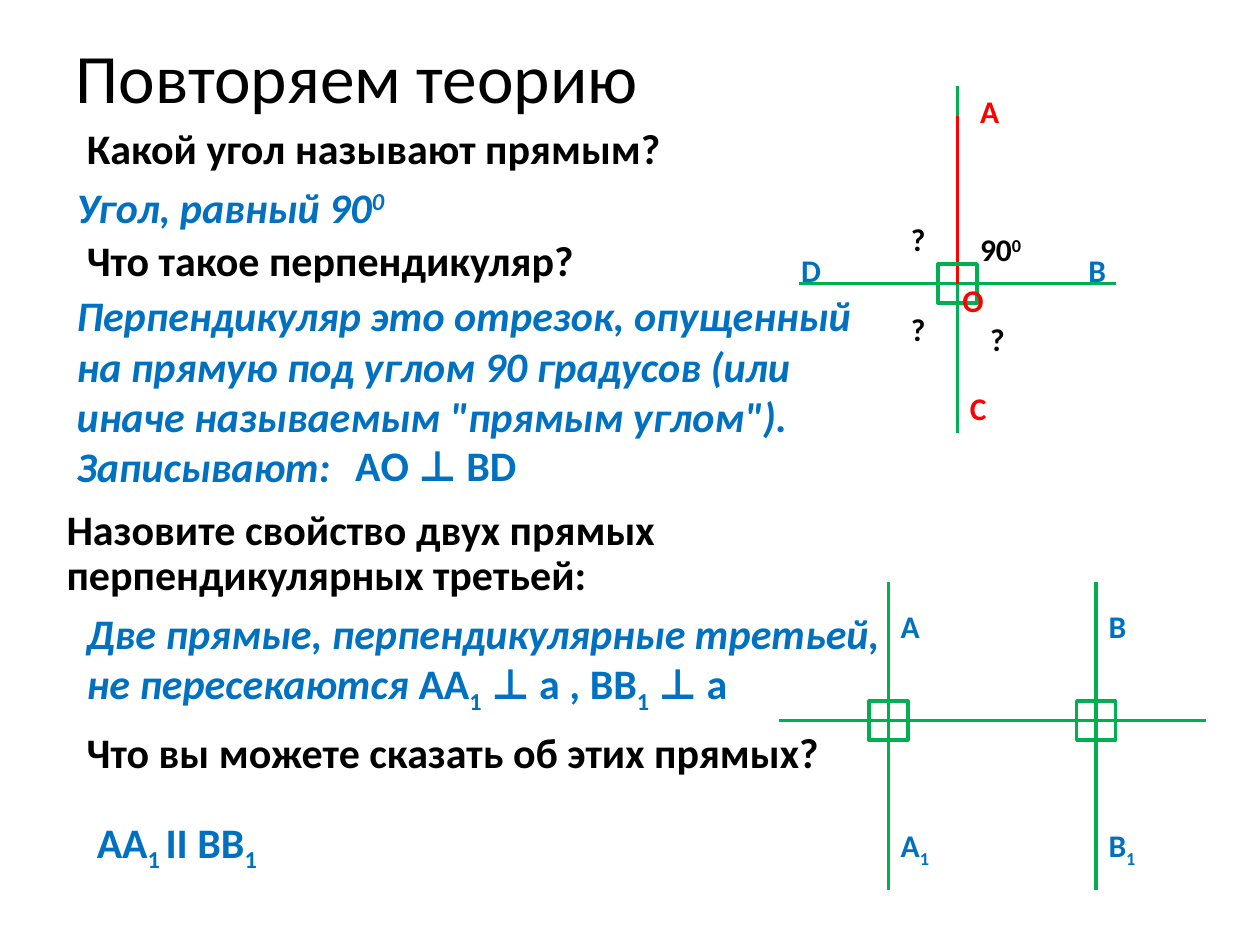
from lxml.etree import SubElement
from pptx import Presentation
from pptx.dml.color import RGBColor as Rgb
from pptx.enum.shapes import MSO_CONNECTOR as Conn, MSO_SHAPE as Form
from pptx.enum.text import MSO_ANCHOR as Anchor, MSO_AUTO_SIZE as Fit, PP_ALIGN as Align
from pptx.oxml.ns import qn
from pptx.util import Inches, Pt

FACE = "Calibri"
HUES = {"black": "000000", "blue": "0070C0", "red": "FF0000", "green": "00B050"}
TITLE = "Повторяем теорию"

# Runs are split by "|"; a run may open with ^ (raised), _ (lowered) or / (upright).
SHIFTS = {"^": "30000", "_": "-25000"}

# text, (left, top, width, height), hue, italic, paragraph format
LEAD = {"space_before": Pt(4.8)}
TIGHT = {**LEAD, "line_spacing": 0.9}
BODY = [
    ("Какой угол называют прямым?", (0.59, 0.92, 5.51, 0.5), "black", False, {}),
    ("Угол, равный 90|^0", (0.51, 1.39, 2.76, 0.5), "blue", True, {}),
    ("Что такое перпендикуляр?", (0.59, 1.86, 5.59, 0.47), "black", False, TIGHT),
    ("Перпендикуляр это отрезок, опущенный на прямую под углом 90 градусов "
     "(или иначе называемым \"прямым углом\"). Записывают:",
     (0.51, 2.25, 6.38, 1.72), "blue", True, {}),
    ("AО ⊥ ВD", (2.72, 3.44, 2.13, 0.63), "blue", False, LEAD),
    ("Назовите свойство двух прямых перпендикулярных третьей:",
     (0.43, 3.99, 7.64, 0.87), "black", False, TIGHT),
    ("Две прямые, перпендикулярные третьей, не пересекаются |/AА|_1|/ ⊥ а , ВВ|_1|/ ⊥ а",
     (0.59, 4.77, 6.77, 0.91), "blue", True, {}),
    ("Что вы можете сказать об этих прямых?", (0.59, 5.72, 6.14, 0.55), "black", False, LEAD),
    ("AА|_1 |II ВВ|_1", (0.67, 6.43, 1.57, 0.5), "blue", False, {}),
]

# The cross of lines AC and BD, and the two lines square to a third
MID = (7.6, 2.25)
BASE = 5.72
POSTS = [("А", 7.05), ("В", 8.7)]
SIDE = 0.31

LINES = [
    ((MID[0], 3.44), (MID[0], 0.68), "green"),
    ((6.34, MID[1]), (8.86, MID[1]), "green"),
    (MID, (MID[0], 0.92), "red"),
    ((9.57, BASE), (6.18, BASE), "green"),
]
MARKS = [MID]

# text, left, top, width, hue
LABELS = [
    ("А", 7.68, 0.68, 0.35, "red"),
    ("В", 8.54, 1.94, 0.34, "blue"),
    ("С", 7.6, 3.04, 0.34, "red"),
    ("D", 6.26, 1.94, 0.36, "blue"),
    ("О", 7.54, 2.18, 0.37, "red"),
    ("90|^0", 7.68, 1.78, 0.54, "black"),
    ("?", 7.13, 1.7, 0.32, "black"),
    ("?", 7.13, 2.41, 0.32, "black"),
    ("?", 7.76, 2.49, 0.32, "black"),
]
for name, x in POSTS:
    LINES.append(((x, 7.06), (x, 4.62), "green"))
    MARKS.append((x, BASE))
    LABELS += [(name, x, 4.77, 0.35, "blue"), (name + "|_1", x, 6.51, 0.44, "blue")]


def style(item, form):
    for key, value in form.items():
        setattr(item, key, value)


def hue(name):
    return Rgb.from_string(HUES[name])


def write(para, text, color, form):
    """Add the marked-up text to a paragraph, run by run."""
    for part in text.split("|"):
        mark = part[0] if part[0] in "^_/" else ""
        run = para.add_run()
        run.text = part[len(mark):]
        style(run.font, {"name": FACE, **form})
        run.font.color.rgb = hue(color)
        if mark in SHIFTS:
            run.font._element.set("baseline", SHIFTS[mark])
        if mark in ("/", "_"):
            run.font.italic = False


def add_text(slide, text, box, color, font, wrap=True, form=None):
    frame = slide.shapes.add_textbox(*map(Inches, box)).text_frame
    style(frame, {"word_wrap": wrap, "auto_size": Fit.NONE})
    para = frame.paragraphs[0]
    style(para, form or {})
    write(para, text, color, {"bold": True, **font})


def add_line(slide, start, end, color):
    line = slide.shapes.add_connector(Conn.STRAIGHT, *map(Inches, start + end))
    line.line.color.rgb = hue(color)
    line.line.width = Pt(2)
    SubElement(line._element.spPr, qn("a:effectLst"))


def add_mark(slide, x, y):
    """Draw a right-angle square centred on a crossing."""
    box = (x - SIDE / 2, y - SIDE / 2, SIDE, SIDE)
    mark = slide.shapes.add_shape(Form.RECTANGLE, *map(Inches, box))
    mark.shadow.inherit = False
    mark.fill.background()
    mark.line.color.rgb = hue("green")
    mark.line.width = Pt(2)


def main():
    deck = Presentation()
    deck.slide_width, deck.slide_height = Inches(10), Inches(7.5)
    slide = deck.slides.add_slide(deck.slide_layouts[5])

    title = slide.shapes.title
    style(title, {"left": Inches(0.5), "top": Inches(0.3),
                  "width": Inches(8.75), "height": Inches(0.61)})
    style(title.text_frame, {"vertical_anchor": Anchor.MIDDLE, "auto_size": Fit.NONE})
    head = title.text_frame.paragraphs[0]
    head.alignment = Align.LEFT
    write(head, TITLE, "black", {"size": Pt(39.6)})

    for line in LINES:
        add_line(slide, *line)
    for x, y in MARKS:
        add_mark(slide, x, y)
    for text, box, color, slant, form in BODY:
        add_text(slide, text, box, color, {"size": Pt(24), "italic": slant}, form=form)
    for text, x, y, width, color in LABELS:
        add_text(slide, text, (x, y, width, 0.4), color, {"size": Pt(18)}, wrap=False)

    deck.save("out.pptx")


if __name__ == "__main__":
    main()
